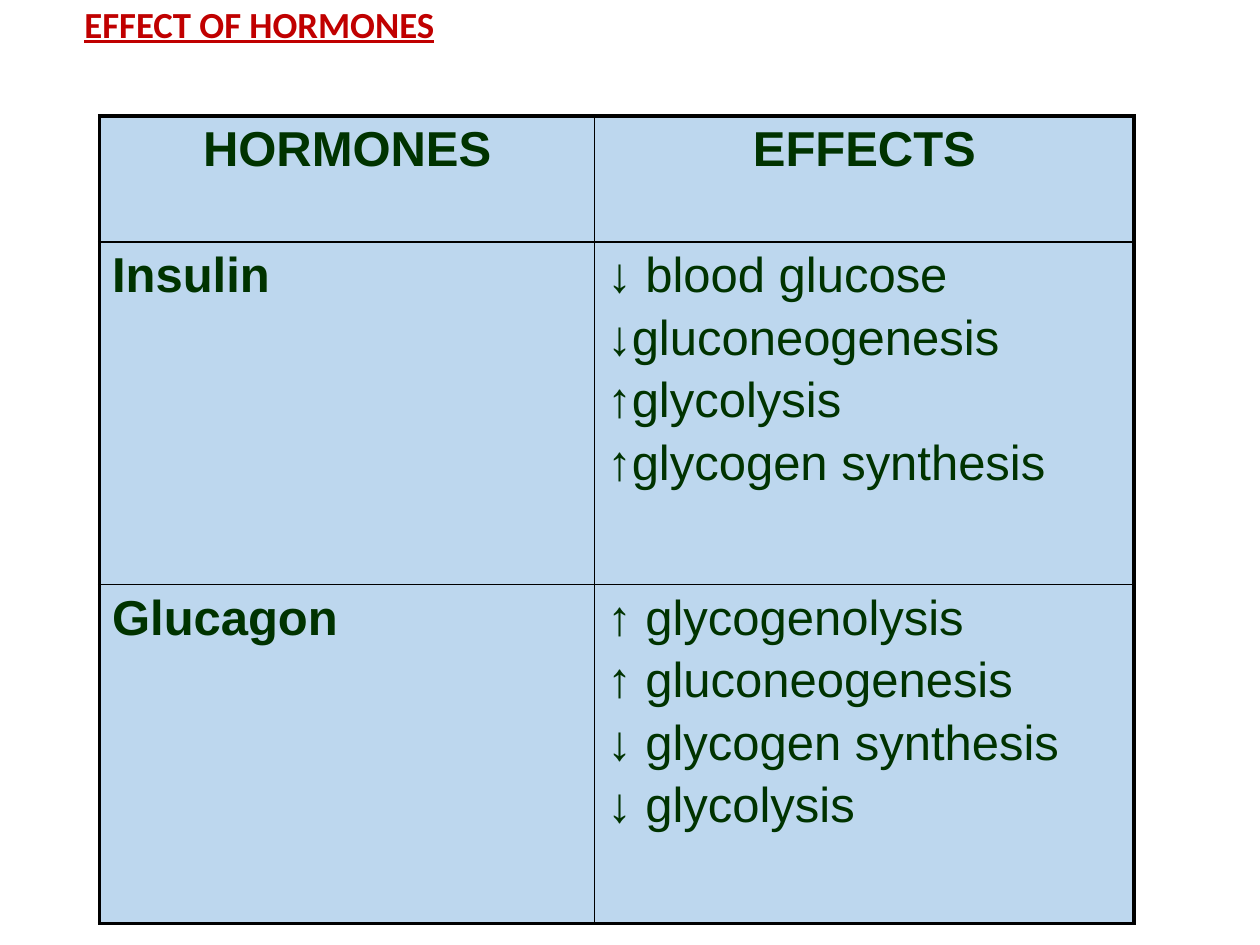
from dataclasses import dataclass

from pptx import Presentation
from pptx import util as u
from pptx.dml.color import RGBColor
from pptx.enum import text
from pptx.oxml import parse_xml
from pptx.oxml.ns import nsdecls


@dataclass(frozen=True)
class Theme:
    heading: str = "C00000"
    ink: str = "003300"
    cell: str = "BDD7EE"
    rule: str = "000000"
    heading_font: str = "Calibri"
    table_font: str = "Arial"
    heading_size: float = 21
    table_size: float = 28
    outer_rule: float = 2.25
    inner_rule: float = 1


THEME = Theme()
ROWS = [
    (["HORMONES"], ["EFFECTS"]),
    (["Insulin"],
     ["↓ blood glucose", "↓gluconeogenesis", "↑glycolysis", "↑glycogen synthesis"]),
    (["Glucagon"],
     ["↑ glycogenolysis", "↑ gluconeogenesis", "↓ glycogen synthesis", "↓ glycolysis"]),
]
COLUMN_WIDTHS = [3.93, 4.28]
ROW_HEIGHTS = [1, 2.72, 2.69]


def format_parts(target, values):
    for name, value in values.items():
        setattr(target, name, value)


def format_font(font, color, **values):
    format_parts(font, values)
    font.color.rgb = RGBColor.from_string(color)


def add_border(cell, side, width):
    """Draw one side of a cell: L, R, T or B."""
    cell._tc.get_or_add_tcPr().append(parse_xml(
        f'<a:ln{side} {nsdecls("a")} w="{u.Pt(width)}"><a:solidFill>'
        f'<a:srgbClr val="{THEME.rule}"/></a:solidFill></a:ln{side}>'))


def place_heading(page, box):
    title = page.shapes.title
    format_parts(title, dict(zip(("left", "top", "width", "height"), box)))
    frame = title.text_frame
    format_parts(frame, {"word_wrap": True, "vertical_anchor": text.MSO_ANCHOR.TOP,
                         "auto_size": text.MSO_AUTO_SIZE.NONE,
                         "margin_left": u.Inches(0.17), "margin_top": u.Inches(0.05)})
    para = frame.paragraphs[0]
    format_parts(para, {"alignment": text.PP_ALIGN.LEFT, "line_spacing": 0.9,
                        "space_before": u.Pt(7.5)})
    span = para.add_run()
    span.text = "EFFECT OF HORMONES"
    format_font(span.font, THEME.heading, name=THEME.heading_font,
                size=u.Pt(THEME.heading_size), bold=True, underline=True)


def fill_cell(cell, lines, bold, alignment):
    cell.fill.solid()
    cell.fill.fore_color.rgb = RGBColor.from_string(THEME.cell)
    for index, line in enumerate(lines):
        frame = cell.text_frame
        para = frame.add_paragraph() if index else frame.paragraphs[0]
        format_parts(para, {"alignment": alignment, "space_before": u.Pt(4.5)})
        span = para.add_run()
        span.text = line
        format_font(span.font, THEME.ink, name=THEME.table_font,
                    size=u.Pt(THEME.table_size), bold=bold)


def place_table(page, box):
    table = page.shapes.add_table(len(ROWS), len(COLUMN_WIDTHS), *box).table
    format_parts(table, {"first_row": False, "horz_banding": False})
    for column, width in zip(table.columns, COLUMN_WIDTHS):
        column.width = u.Inches(width)
    for row, height in zip(table.rows, ROW_HEIGHTS):
        row.height = u.Inches(height)

    last_row, last_column = len(ROWS) - 1, len(COLUMN_WIDTHS) - 1
    for r, entries in enumerate(ROWS):
        for c, lines in enumerate(entries):
            cell = table.cell(r, c)
            # Heavy rules run round the outside, thin ones between cells
            outside = {"L": c == 0, "R": c == last_column,
                       "T": r == 0, "B": r == last_row}
            for side, heavy in outside.items():
                add_border(cell, side, THEME.outer_rule if heavy else THEME.inner_rule)
            fill_cell(cell, lines, bold=r == 0 or c == 0,
                      alignment=text.PP_ALIGN.LEFT if r else text.PP_ALIGN.CENTER)


def main():
    deck = Presentation()
    format_parts(deck, {"slide_width": u.Inches(10), "slide_height": u.Inches(7.5)})
    page = deck.slides.add_slide(deck.slide_layouts[5])
    place_heading(page, [u.Inches(n) for n in (0.5, 0, 8.75, 7.25)])
    place_table(page, [u.Inches(n) for n in
                       (0.79, 0.92, sum(COLUMN_WIDTHS), sum(ROW_HEIGHTS))])
    deck.save("out.pptx")


if __name__ == "__main__":
    main()
